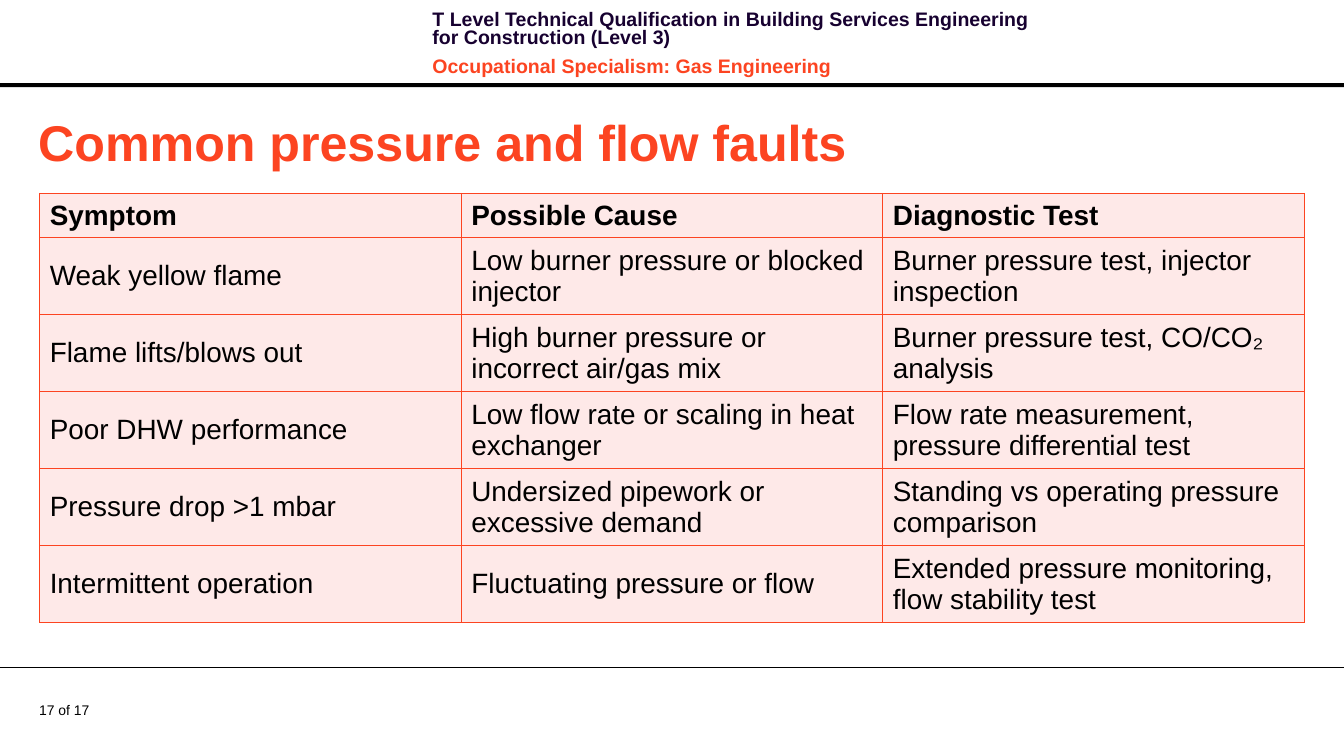
from lxml import etree
from pptx import Presentation
from pptx.dml.color import RGBColor
from pptx.enum import shapes, text
from pptx.oxml import ns
from pptx.util import Pt

ORANGE, NAVY, BLACK, PINK = "FC4421", "170130", "000000", "FEE9E8"
WIDTH, HEIGHT = 964, 538.6


def rgb(value):
    return RGBColor.from_string(value)


def write(paragraph, words, size, color=BLACK, bold=False, line=None, before=0, after=0):
    run = paragraph.add_run()
    run.text = words
    run.font.name = "Arial"
    run.font.size = Pt(size)
    run.font.bold = bold
    run.font.color.rgb = rgb(color)
    paragraph.space_before = Pt(before)
    paragraph.space_after = Pt(after)
    if line:
        paragraph.line_spacing = Pt(line)
    paragraph.alignment = text.PP_ALIGN.LEFT


deck = Presentation()
deck.slide_width, deck.slide_height = Pt(WIDTH), Pt(HEIGHT)
slide = deck.slides.add_slide(deck.slide_layouts[5])

# Header and footer
header_rule = slide.shapes.add_shape(
    shapes.MSO_SHAPE.RECTANGLE, Pt(0), Pt(59.7), Pt(WIDTH), Pt(2.9))
header_rule.shadow.inherit = False
header_rule.fill.solid()
header_rule.fill.fore_color.rgb = rgb(BLACK)
header_rule.line.fill.background()

footer_rule = slide.shapes.add_connector(
    shapes.MSO_CONNECTOR.STRAIGHT, Pt(0), Pt(478.6), Pt(WIDTH), Pt(478.6))
footer_rule.line.color.rgb = rgb(BLACK)
footer_rule.line.width = Pt(0.75)
etree.SubElement(footer_rule._element.spPr, ns.qn("a:effectLst"))

course = slide.shapes.add_textbox(Pt(303.1), Pt(5), Pt(458.6), Pt(46)).text_frame
course.word_wrap = True
write(course.paragraphs[0],
      "T Level Technical Qualification in Building Services Engineering for Construction (Level 3)",
      14, NAVY, bold=True, line=13.1, after=4)
write(course.add_paragraph(), "Occupational Specialism: Gas Engineering",
      14, ORANGE, bold=True, line=13.1, before=4, after=4)

page_number = slide.shapes.add_textbox(Pt(28.1), Pt(503.3), Pt(46), Pt(12.2)).text_frame
page_number.margin_left = page_number.margin_right = Pt(0)
page_number.margin_top = page_number.margin_bottom = Pt(0)
page_number.vertical_anchor = text.MSO_ANCHOR.MIDDLE
write(page_number.paragraphs[0], "17 of 17", 10)

# Title
title = slide.shapes.title
title.left, title.top, title.width, title.height = Pt(20.2), Pt(75.6), Pt(915.8), Pt(51.1)
title.text_frame.word_wrap = True
title.text_frame.auto_size = text.MSO_AUTO_SIZE.NONE
title.text_frame.vertical_anchor = text.MSO_ANCHOR.MIDDLE
write(title.text_frame.paragraphs[0], "Common pressure and flow faults", 36, ORANGE, bold=True)

# Fault table
faults = [
    ("Symptom", "Possible Cause", "Diagnostic Test"),
    ("Weak yellow flame", "Low burner pressure or blocked injector",
     "Burner pressure test, injector inspection"),
    ("Flame lifts/blows out", "High burner pressure or incorrect air/gas mix",
     "Burner pressure test, CO/CO₂ analysis"),
    ("Poor DHW performance", "Low flow rate or scaling in heat exchanger",
     "Flow rate measurement, pressure differential test"),
    ("Pressure drop >1 mbar", "Undersized pipework or excessive demand",
     "Standing vs operating pressure comparison"),
    ("Intermittent operation", "Fluctuating pressure or flow",
     "Extended pressure monitoring, flow stability test"),
]
HEAD_ROW, BODY_ROW, COLUMN = 31.6, 55.1, 302.4
table = slide.shapes.add_table(
    len(faults), 3, Pt(28.5), Pt(138.8), Pt(3 * COLUMN),
    Pt(HEAD_ROW + BODY_ROW * (len(faults) - 1))).table
table.horz_banding = False
for column in table.columns:
    column.width = Pt(COLUMN)

for r, fault in enumerate(faults):
    table.rows[r].height = Pt(BODY_ROW if r else HEAD_ROW)
    for c, words in enumerate(fault):
        cell = table.cell(r, c)
        cell.vertical_anchor = text.MSO_ANCHOR.MIDDLE
        write(cell.text_frame.paragraphs[0], words, 20, bold=r == 0)
        properties = cell._tc.get_or_add_tcPr()
        for side in ("lnL", "lnR", "lnT", "lnB"):
            border = etree.SubElement(properties, ns.qn(f"a:{side}"), w=str(Pt(1)))
            fill = etree.SubElement(border, ns.qn("a:solidFill"))
            etree.SubElement(fill, ns.qn("a:srgbClr"), val=ORANGE)
        cell.fill.solid()
        cell.fill.fore_color.rgb = rgb(PINK)

deck.save("out.pptx")
